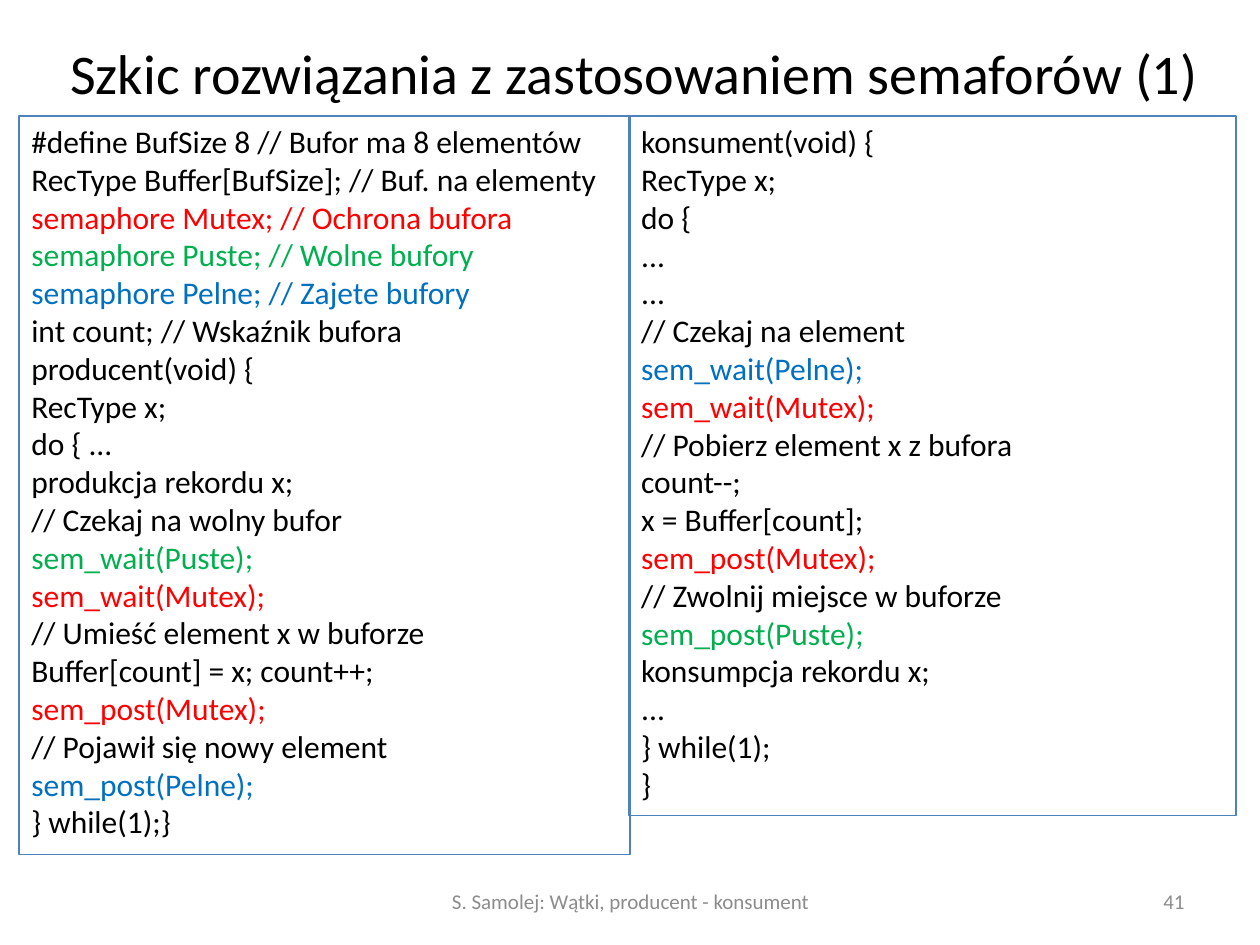
from dataclasses import dataclass

from pptx import Presentation
from pptx.dml.color import RGBColor as Color
from pptx.enum.shapes import MSO_SHAPE as Shape
from pptx.enum.text import MSO_ANCHOR as Anchor, MSO_AUTO_SIZE as AutoSize, PP_ALIGN as Align
from pptx.util import Inches, Pt


@dataclass(frozen=True)
class Theme:
    font: str = "Calibri"
    title_size: int = 32
    code_size: int = 18
    footer_size: int = 12
    text: str = "000000"
    footer: str = "8C8C8C"
    border: str = "4F81BD"
    background: str = "FFFFFF"


THEME = Theme()

# Every line that uses a semaphore takes that semaphore's colour
SEMAPHORE_COLORS = {"Mutex": "FF0000", "Puste": "00B050", "Pelne": "0070C0"}

PRODUCER = """#define BufSize 8 // Bufor ma 8 elementów
RecType Buffer[BufSize]; // Buf. na elementy
semaphore Mutex; // Ochrona bufora
semaphore Puste; // Wolne bufory
semaphore Pelne; // Zajete bufory
int count; // Wskaźnik bufora
producent(void) {
RecType x;
do { ...
produkcja rekordu x;
// Czekaj na wolny bufor
sem_wait(Puste);
sem_wait(Mutex);
// Umieść element x w buforze
Buffer[count] = x; count++;
sem_post(Mutex);
// Pojawił się nowy element
sem_post(Pelne);
} while(1);}"""

CONSUMER = """konsument(void) {
RecType x;
do {
...
...
// Czekaj na element
sem_wait(Pelne);
sem_wait(Mutex);
// Pobierz element x z bufora
count--;
x = Buffer[count];
sem_post(Mutex);
// Zwolnij miejsce w buforze
sem_post(Puste);
konsumpcja rekordu x;
...
} while(1);
}"""


def line_color(line):
    for name, color in SEMAPHORE_COLORS.items():
        if name in line:
            return color
    return THEME.text


def add_span(para, text, size, color, align):
    para.alignment = align
    span = para.add_run()
    span.text = text
    span.font.name = THEME.font
    span.font.size = Pt(size)
    span.font.color.rgb = Color.from_string(color)


def set_title(slide, text):
    title = slide.shapes.title
    title.left, title.top = Inches(0.35), Inches(0.3)
    title.width, title.height = Inches(9.37), Inches(0.54)
    frame = title.text_frame
    frame.auto_size = AutoSize.NONE
    frame.vertical_anchor = Anchor.MIDDLE
    add_span(frame.paragraphs[0], text, THEME.title_size, THEME.text, Align.CENTER)


def add_code_box(slide, code, left, width, height):
    box = slide.shapes.add_shape(
        Shape.RECTANGLE, Inches(left), Inches(0.92), Inches(width), Inches(height))
    box.shadow.inherit = False
    box.fill.background()
    box.line.color.rgb = Color.from_string(THEME.border)
    box.line.width = Pt(0.75)
    frame = box.text_frame
    frame.word_wrap = True
    frame.auto_size = AutoSize.SHAPE_TO_FIT_TEXT
    frame.vertical_anchor = Anchor.TOP
    for index, line in enumerate(code.splitlines()):
        para = frame.add_paragraph() if index else frame.paragraphs[0]
        add_span(para, line, THEME.code_size, line_color(line), Align.LEFT)


def add_footer(slide, text, left, width, align):
    box = slide.shapes.add_textbox(Inches(left), Inches(6.95), Inches(width), Inches(0.4))
    frame = box.text_frame
    frame.word_wrap = True
    frame.vertical_anchor = Anchor.MIDDLE
    add_span(frame.paragraphs[0], text, THEME.footer_size, THEME.footer, align)


def main():
    deck = Presentation()
    deck.slide_width, deck.slide_height = Inches(10), Inches(7.5)
    slide = deck.slides.add_slide(deck.slide_layouts.get_by_name("Title Only"))
    slide.background.fill.solid()
    slide.background.fill.fore_color.rgb = Color.from_string(THEME.background)

    # Title
    set_title(slide, "Szkic rozwiązania z zastosowaniem semaforów (1)")

    # Footer and page number
    add_footer(slide, "S. Samolej: Wątki, producent - konsument", 3.42, 3.17, Align.CENTER)
    add_footer(slide, "41", 7.17, 2.33, Align.RIGHT)

    # Producer and consumer code side by side
    add_code_box(slide, PRODUCER, left=0.15, width=4.85, height=5.86)
    add_code_box(slide, CONSUMER, left=4.99, width=4.82, height=5.55)

    deck.save("out.pptx")


if __name__ == "__main__":
    main()
